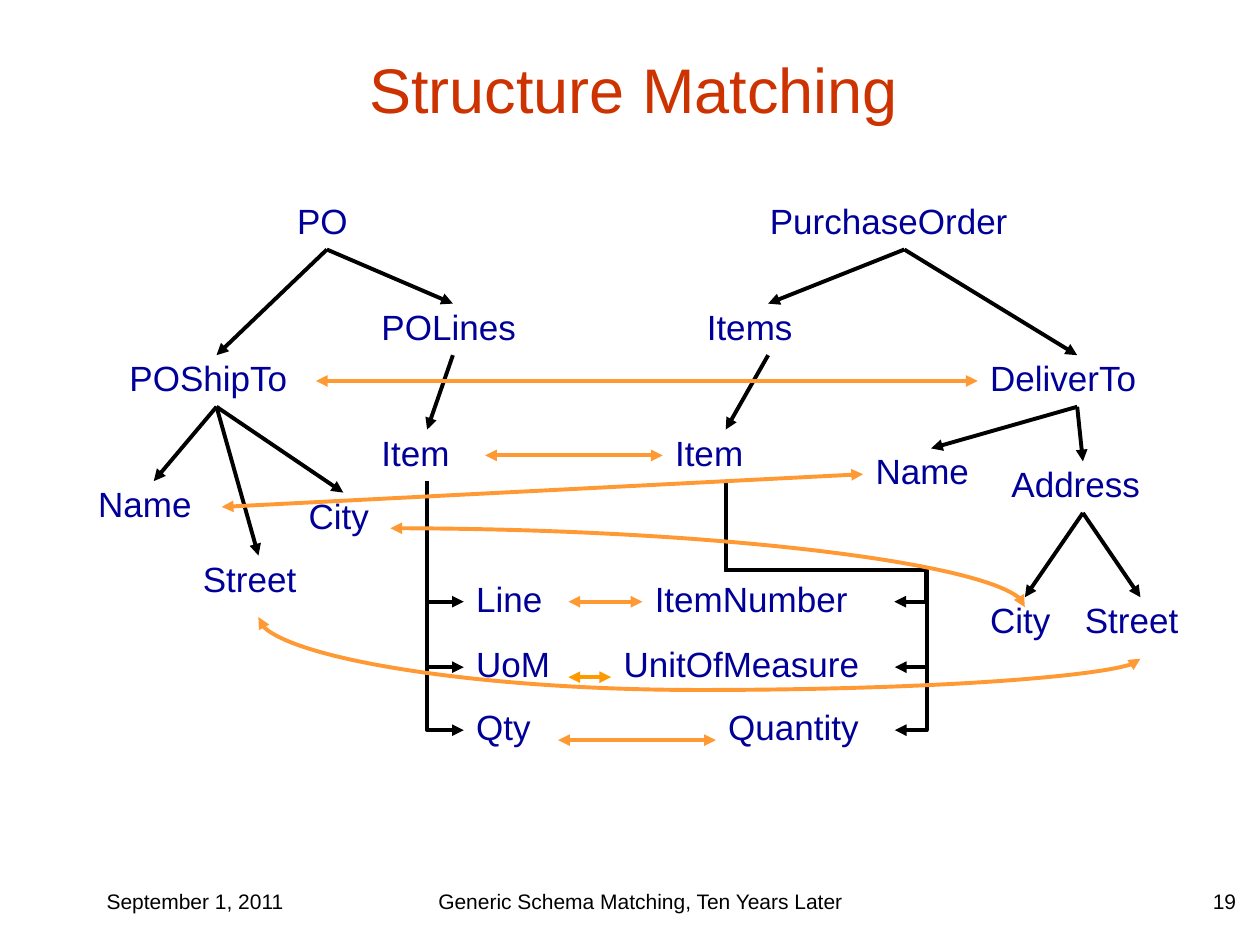
from lxml import etree
from pptx import Presentation
from pptx.dml.color import RGBColor
from pptx.enum.shapes import MSO_CONNECTOR
from pptx.enum.text import MSO_ANCHOR, PP_ALIGN
from pptx.oxml.ns import qn
from pptx.util import Cm, Pt

FONT = "Arial"
RED = RGBColor(0xCC, 0x33, 0x00)
NAVY = RGBColor(0x00, 0x00, 0x99)
BLACK = RGBColor(0x00, 0x00, 0x00)
ORANGE = RGBColor(0xFF, 0x99, 0x33)
AMBER = RGBColor(0xFF, 0x99, 0x00)

TITLE = "Structure Matching"
FOOTERS = [  # text, left, width, alignment
    ("September 1, 2011", 1.9, 5.28, PP_ALIGN.LEFT),
    ("Generic Schema Matching, Ten Years Later", 8.05, 9.73, PP_ALIGN.CENTER),
    ("19", 19.89, 5.28, PP_ALIGN.RIGHT),
]

# Schema elements: name -> left, top, width in cm
SOURCE = {
    "PO": (5.74, 3.99, 1.7),
    "POLines": (7.44, 6.12, 3.38),
    "POShipTo": (2.36, 7.16, 4.01),
    "Item": (7.44, 8.66, 2.34),
    "Name": (1.73, 9.7, 2.74),
    "City": (5.97, 9.93, 1.9),
    "Street": (3.84, 11.2, 2.74),
    "Line": (9.35, 11.61, 2.11),
    "UoM": (9.35, 12.93, 2.11),
    "Qty": (9.35, 14.2, 1.9),
}
TARGET = {
    "PurchaseOrder": (15.27, 3.99, 5.92),
    "Items": (14, 6.12, 2.97),
    "DeliverTo": (19.71, 7.16, 4.01),
    "Item": (13.36, 8.66, 2.54),
    "Name": (17.4, 9.04, 2.74),
    "Address": (20.14, 9.3, 3.38),
    "City": (19.71, 12.04, 1.9),
    "Street": (21.62, 12.04, 2.74),
    "ItemNumber": (12.95, 11.61, 5.08),
    "UnitOfMeasure": (12.32, 12.93, 5.72),
    "Quantity": (14.43, 14.2, 3.61),
}
SOURCE_TREE = {
    "PO": ["POLines", "POShipTo"],
    "POLines": ["Item"],
    "POShipTo": ["Name", "Street", "City"],
}
TARGET_TREE = {
    "PurchaseOrder": ["Items", "DeliverTo"],
    "Items": ["Item"],
    "DeliverTo": ["Name", "Address"],
    "Address": ["City", "Street"],
}
SOURCE_FIELDS = ["Line", "UoM", "Qty"]
TARGET_FIELDS = ["ItemNumber", "UnitOfMeasure", "Quantity"]
MATCHES = [  # source, target, colour, distance below the middle
    ("POShipTo", "DeliverTo", ORANGE, 0),
    ("Item", "Item", ORANGE, 0),
    ("Name", "Name", ORANGE, 0),
    ("Line", "ItemNumber", ORANGE, 0),
    ("UoM", "UnitOfMeasure", AMBER, 0.2),
    ("Qty", "Quantity", ORANGE, 0.2),
]

NODE_HEIGHT = 1.04
CURVE_DROP = Cm(0.2)
FIELD_BEND = Cm(1.8)
FIELD_LANE = Cm(0.64)
TOP, LEFT, BOTTOM, RIGHT = range(4)  # connection sites of a box


def format_paragraph(para, size, color, alignment):
    para.font.name = FONT
    para.font.size = Pt(size)
    para.font.color.rgb = color
    para.alignment = alignment


def add_text(slide, text, left, top, width, height, size, color, alignment):
    box = slide.shapes.add_textbox(Cm(left), Cm(top), Cm(width), Cm(height))
    box.text_frame.word_wrap = True
    para = box.text_frame.paragraphs[0]
    para.text = text
    format_paragraph(para, size, color, alignment)
    return box


def add_nodes(slide, places):
    boxes = {}
    for name, (left, top, width) in places.items():
        box = add_text(slide, name, left, top, width, NODE_HEIGHT, 20, NAVY, PP_ALIGN.LEFT)
        para = box.text_frame.paragraphs[0]
        para.line_spacing = 0.9
        para.space_before = Pt(4)
        boxes[name] = box
    return boxes


def site(box, side, drop=0):
    """Return the point at the middle of one side, moved down by drop."""
    x = box.left + {LEFT: 0, RIGHT: box.width}.get(side, box.width // 2)
    y = box.top + {TOP: 0, BOTTOM: box.height}.get(side, box.height // 2)
    return x, y + drop


def add_arrow(slide, kind, start, end, color, both_ends=False):
    arrow = slide.shapes.add_connector(kind, *start, *end)
    arrow.line.color.rgb = color
    arrow.line.width = Pt(2.25)
    line = arrow.line._get_or_add_ln()
    for tag in ["a:headEnd", "a:tailEnd"] if both_ends else ["a:tailEnd"]:
        etree.SubElement(line, qn(tag), type="triangle")
    etree.SubElement(arrow._element.spPr, qn("a:effectLst"))
    return arrow


def set_route(arrow, preset, *adjustments):
    geometry = arrow._element.spPr.find(qn("a:prstGeom"))
    geometry.set("prst", preset)
    guides = geometry.find(qn("a:avLst"))
    for number, value in enumerate(adjustments, 1):
        etree.SubElement(guides, qn("a:gd"), name=f"adj{number}",
                         fmla=f"val {round(value * 100000)}")


def add_downward_arrow(slide, kind, start, end, color, both_ends=False):
    """Add a connector that leaves its start vertically: a quarter turn, flipped."""
    (x1, y1), (x2, y2) = start, end
    middle_x, middle_y = (x1 + x2) // 2, (y1 + y2) // 2
    half_width, half_height = (y2 - y1) // 2, (x2 - x1) // 2
    arrow = add_arrow(slide, kind,
                      (middle_x + half_width, middle_y - half_height),
                      (middle_x - half_width, middle_y + half_height),
                      color, both_ends)
    arrow._element.spPr.find(qn("a:xfrm")).set("rot", str(270 * 60000))
    return arrow


def add_straight(slide, first, first_side, second, second_side, color, both_ends=False, drop=0):
    arrow = add_arrow(slide, MSO_CONNECTOR.STRAIGHT, site(first, first_side, drop),
                      site(second, second_side, drop), color, both_ends)
    if not drop:
        arrow.begin_connect(first, first_side)
        arrow.end_connect(second, second_side)


def add_fields(slide, boxes, names, side):
    start = site(boxes["Item"], BOTTOM)
    for name in names:
        end = site(boxes[name], side)
        arrow = add_downward_arrow(slide, MSO_CONNECTOR.ELBOW, start, end, BLACK)
        if side == LEFT:
            set_route(arrow, "bentConnector2")
        else:
            set_route(arrow, "bentConnector4", FIELD_BEND / (end[1] - start[1]),
                      1 + FIELD_LANE / (end[0] - start[0]))


def add_curves(slide, source, target):
    city = add_arrow(slide, MSO_CONNECTOR.CURVE, site(source["City"], RIGHT, CURVE_DROP),
                     site(target["City"], TOP, CURVE_DROP), ORANGE, True)
    set_route(city, "curvedConnector2")
    street = add_downward_arrow(slide, MSO_CONNECTOR.CURVE,
                                site(source["Street"], BOTTOM, CURVE_DROP),
                                site(target["Street"], BOTTOM, CURVE_DROP), ORANGE, True)
    set_route(street, "curvedConnector3", 1.75)


def main():
    deck = Presentation()
    deck.slide_width, deck.slide_height = Cm(25.4), Cm(19.05)
    slide = deck.slides.add_slide(deck.slide_layouts[5])

    title = slide.shapes.title
    title.left, title.top, title.width, title.height = Cm(1.35), Cm(0.2), Cm(22.86), Cm(3.18)
    title.text_frame.text = TITLE
    title.text_frame.vertical_anchor = MSO_ANCHOR.MIDDLE
    format_paragraph(title.text_frame.paragraphs[0], 36, RED, PP_ALIGN.CENTER)

    for text, left, width, alignment in FOOTERS:
        add_text(slide, text, left, 17.78, width, 1.27, 12, BLACK, alignment)

    source, target = add_nodes(slide, SOURCE), add_nodes(slide, TARGET)
    for boxes, tree in [(source, SOURCE_TREE), (target, TARGET_TREE)]:
        for parent, children in tree.items():
            for child in children:
                add_straight(slide, boxes[parent], BOTTOM, boxes[child], TOP, BLACK)
    add_fields(slide, source, SOURCE_FIELDS, LEFT)
    add_fields(slide, target, TARGET_FIELDS, RIGHT)

    for first, second, color, drop in MATCHES:
        add_straight(slide, source[first], RIGHT, target[second], LEFT, color, True, Cm(drop))
    add_curves(slide, source, target)

    deck.save("out.pptx")


if __name__ == "__main__":
    main()
